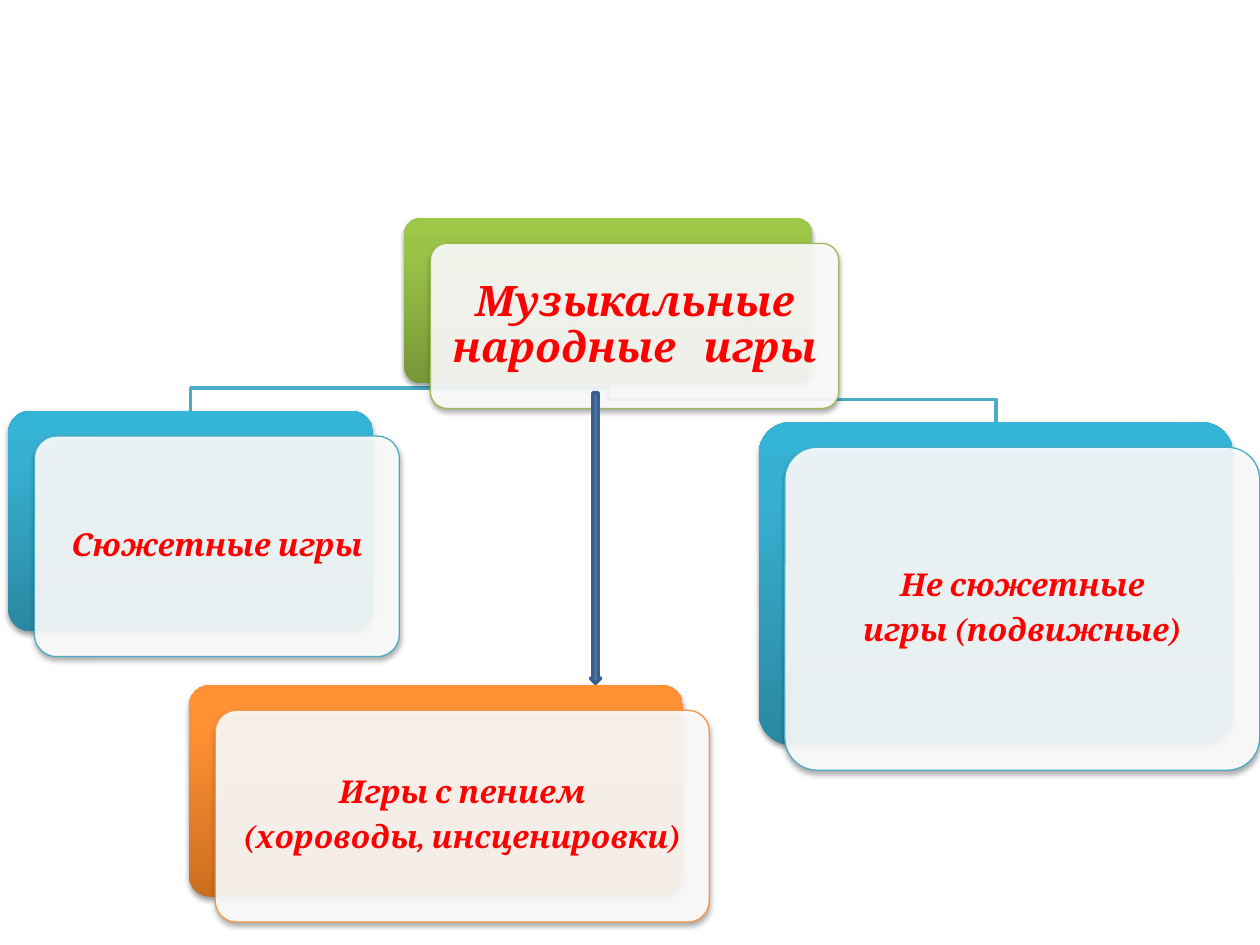
from pptx import Presentation
from pptx.dml.color import RGBColor
from pptx.enum.shapes import MSO_SHAPE
from pptx.enum.text import MSO_ANCHOR, PP_ALIGN
from pptx.oxml import parse_xml
from pptx.oxml.ns import nsdecls, qn
from pptx.util import Pt

ROUNDED = MSO_SHAPE.ROUNDED_RECTANGLE
DOWN_ARROW = MSO_SHAPE.DOWN_ARROW
MIDDLE = MSO_ANCHOR.MIDDLE
CENTER = PP_ALIGN.CENTER

COLORS = {
    "text": "FF0000", "card": "FFFFFF", "elbow": "4BACC6",
    "arrow": "4F81BD", "arrow_line": "3A5F8C",
    "green_line": "9BBB59", "blue_line": "4BACC6", "orange_line": "F79646",
}
GRADIENTS = {
    "green": ("779737", "9BC348", "9DC746"),
    "blue": ("2A88A2", "37B1D2", "34B4D6"),
    "orange": ("CC6E20", "FF9034", "FF9136"),
}
STOPS = (0, 80, 100)
CARD_DX, CARD_DY = 15, 14.4
BEND_GAP = 13

ROOT = (231, 124.7, 233.3, 94.3)
STORY = (4.7, 234.8, 208.5, 126)
SINGING = (108, 391.5, 282.3, 121)
ACTIVE = (433.5, 241.2, 271.3, 184.5)
ARROW_LEFT, ARROW_TOP, ARROW_WIDTH = 337.4, 224.4, 5.8


def rgb(name):
    """Return the named palette colour."""
    return RGBColor.from_string(COLORS[name])


def add_shadow(shape, opacity, distance):
    """Give the shape a soft shadow falling straight down."""
    shape.shadow.inherit = False
    shape._element.spPr.find(qn("a:effectLst")).append(parse_xml(
        f'<a:outerShdw {nsdecls("a")} blurRad="{Pt(3.1)}" dist="{Pt(distance)}" '
        f'dir="5400000" rotWithShape="0"><a:srgbClr val="000000">'
        f'<a:alpha val="{opacity * 1000}"/></a:srgbClr></a:outerShdw>'))


def fill_gradient(shape, hues):
    """Fill the shape with a gradient rising from the bottom edge."""
    shape.fill.gradient()
    shape.fill.gradient_angle = 90
    stop_list = shape._element.spPr.find(".//" + qn("a:gsLst"))
    stop_list.clear()
    for position, hue in zip(STOPS, hues):
        stop_list.append(parse_xml(
            f'<a:gs {nsdecls("a")} pos="{position * 1000}"><a:srgbClr val="{hue}"/></a:gs>'))


def add_rounded(slide, left, top, width, height):
    """Add a slightly rounded rectangle."""
    panel = slide.shapes.add_shape(ROUNDED, Pt(left), Pt(top), Pt(width), Pt(height))
    panel.adjustments[0] = 0.1
    return panel


def add_game_card(slide, box, hue, lines, size=18, inset=5):
    """Place a coloured panel with a translucent captioned card over it."""
    left, top, width, height = box
    panel = add_rounded(slide, *box)
    fill_gradient(panel, GRADIENTS[hue])
    panel.line.fill.background()
    add_shadow(panel, 38, 1.6)

    card = add_rounded(slide, left + CARD_DX, top + CARD_DY, width, height)
    card.fill.solid()
    card.fill.fore_color.rgb = rgb("card")
    card._element.spPr.find(qn("a:solidFill"))[0].append(
        parse_xml(f'<a:alpha {nsdecls("a")} val="90000"/>'))
    card.line.color.rgb = rgb(f"{hue}_line")
    card.line.width = Pt(0.75)
    add_shadow(card, 35, 1.8)

    caption = card.text_frame
    caption.word_wrap = True
    caption.vertical_anchor = MIDDLE
    caption.margin_left = caption.margin_right = Pt(inset)
    caption.margin_top = caption.margin_bottom = Pt(inset)
    for index, line in enumerate(lines):
        paragraph = caption.add_paragraph() if index else caption.paragraphs[0]
        paragraph.text = line
        paragraph.alignment = CENTER
        paragraph.line_spacing = 0.9
        paragraph.space_after = Pt(size * 0.35)
        font = paragraph.font
        font.name, font.size = "Cambria", Pt(size)
        font.bold = font.italic = True
        font.color.rgb = rgb("text")


def add_elbow(slide, parent, child):
    """Draw a bent line from the parent's bottom centre to the child's top centre."""
    start_x, start_y = parent[0] + parent[2] / 2, parent[1] + parent[3]
    end_x, end_y = child[0] + child[2] / 2, child[1]
    bend_y = end_y - BEND_GAP
    builder = slide.shapes.build_freeform(Pt(start_x), Pt(start_y))
    corners = ((start_x, bend_y), (end_x, bend_y), (end_x, end_y))
    builder.add_line_segments([(Pt(x), Pt(y)) for x, y in corners], close=False)
    elbow = builder.convert_to_shape()
    elbow.fill.background()
    elbow.line.color.rgb = rgb("elbow")
    elbow.line.width = Pt(2)
    elbow.shadow.inherit = False


def add_down_arrow(slide, target):
    """Place the thin arrow reaching down to the top edge of the target."""
    height = target[1] - ARROW_TOP - 1
    arrow = slide.shapes.add_shape(
        DOWN_ARROW, Pt(ARROW_LEFT), Pt(ARROW_TOP), Pt(ARROW_WIDTH), Pt(height))
    arrow.fill.solid()
    arrow.fill.fore_color.rgb = rgb("arrow")
    arrow.line.color.rgb = rgb("arrow_line")
    arrow.line.width = Pt(2)
    arrow.shadow.inherit = False


def main():
    """Build the chart of musical folk games."""
    deck = Presentation()
    deck.slide_width, deck.slide_height = Pt(720), Pt(540)
    slide = deck.slides.add_slide(deck.slide_layouts[6])
    for child in (ACTIVE, STORY):
        add_elbow(slide, ROOT, child)
    add_game_card(slide, ROOT, "green", ["Музыкальные народные   игры"], 24, 7.2)
    add_game_card(slide, STORY, "blue", ["Сюжетные игры"])
    add_game_card(slide, SINGING, "orange", ["Игры с пением", "(хороводы, инсценировки)"])
    add_game_card(slide, ACTIVE, "blue", ["Не сюжетные", "игры (подвижные)"])
    add_down_arrow(slide, SINGING)
    deck.save("out.pptx")


if __name__ == "__main__":
    main()
